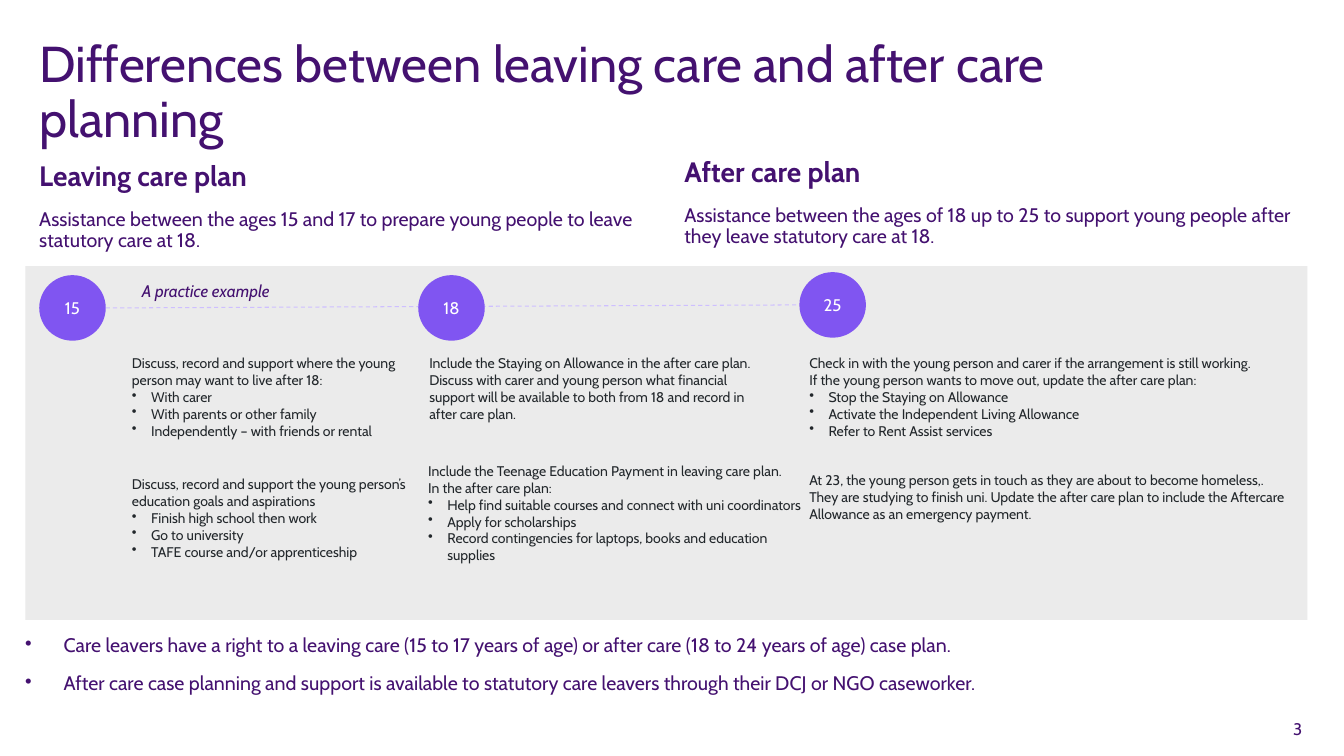
import dataclasses
import typing

import lxml.etree
import pptx
import pptx.dml.color
import pptx.enum.dml
import pptx.enum.shapes
import pptx.enum.text
import pptx.oxml.ns
import pptx.util

RGBColor = pptx.dml.color.RGBColor
PLUM = RGBColor(0x44, 0x11, 0x70)
VIOLET = RGBColor(0x80, 0x55, 0xF1)
LILAC = RGBColor(0xCE, 0xBF, 0xFF)
GREY = RGBColor(0xEB, 0xEB, 0xEB)
INK = RGBColor(0x22, 0x27, 0x2B)
WHITE = RGBColor(0xFF, 0xFF, 0xFF)

WIDE = pptx.util.Inches(13.33)
HIGH = pptx.util.Inches(7.5)
ALIGN = pptx.enum.text.PP_ALIGN
ANCHOR = pptx.enum.text.MSO_ANCHOR
SHAPE = pptx.enum.shapes.MSO_SHAPE

# Paragraph formats
LOOSE = {"line_spacing": 0.9, "space_after": pptx.util.Pt(12)}
TITLE = {"line_spacing": 0.9, "alignment": ALIGN.LEFT}
MIDDLE = {"alignment": ALIGN.CENTER}
RIGHT = {"alignment": ALIGN.RIGHT}
# Text frame formats
BARE = dict.fromkeys(("margin_left", "margin_top", "margin_right", "margin_bottom"), 0)


class Box(typing.NamedTuple):
    """Left, top, width and height as percentages of the slide."""
    left: float
    top: float
    width: float
    height: float


@dataclasses.dataclass
class Line:
    text: str
    size: int = 10
    color: RGBColor = INK
    look: dict = dataclasses.field(default_factory=dict)
    form: dict = dataclasses.field(default_factory=dict)
    indent: float = 0


@dataclasses.dataclass
class Block:
    box: Box
    lines: list[Line]
    frame: dict = dataclasses.field(default_factory=dict)


class Stop(typing.NamedTuple):
    age: str
    left: float
    top: float


def across(share: float) -> int:
    return round(WIDE * share / 100)


def down(share: float) -> int:
    return round(HIGH * share / 100)


def place(box: Box) -> tuple[int, int, int, int]:
    return across(box.left), down(box.top), across(box.width), down(box.height)


def apply(target: typing.Any, values: dict) -> None:
    for name, value in values.items():
        setattr(target, name, value)


def bullet(para: typing.Any, indent: float) -> None:
    """Give a paragraph a round bullet on a hanging indent in inches."""
    props = para._p.get_or_add_pPr()
    hang = pptx.util.Inches(indent)
    props.set("marL", str(hang))
    props.set("indent", str(-hang))
    mark = lxml.etree.SubElement(props, pptx.oxml.ns.qn("a:buChar"))
    mark.set("char", "•")


def write(shape: typing.Any, lines: list[Line], frame: dict) -> None:
    body = shape.text_frame
    apply(body, {"word_wrap": True, "vertical_anchor": ANCHOR.TOP,
                 "auto_size": pptx.enum.text.MSO_AUTO_SIZE.NONE} | frame)
    for index, line in enumerate(lines):
        para = body.add_paragraph() if index else body.paragraphs[0]
        if line.indent:
            bullet(para, line.indent)
        apply(para, line.form)
        run = para.add_run()
        run.text = line.text
        apply(run.font, {"name": "Cabin", "size": pptx.util.Pt(line.size)} | line.look)
        run.font.color.rgb = line.color


def fill(slide: typing.Any, kind: SHAPE, box: Box, color: RGBColor) -> typing.Any:
    shape = slide.shapes.add_shape(kind, *place(box))
    shape.shadow.inherit = False
    shape.fill.solid()
    shape.fill.fore_color.rgb = color
    shape.line.fill.background()
    return shape


def link(slide: typing.Any, start: Stop, end: Stop) -> None:
    """Draw the dashed line from the right of one stop to the left of another."""
    half = DOT_HIGH / 2
    line = slide.shapes.add_connector(
        pptx.enum.shapes.MSO_CONNECTOR.STRAIGHT,
        across(start.left + DOT_WIDE), down(start.top + half),
        across(end.left), down(end.top + half))
    line.line.color.rgb = LILAC
    line.line.width = pptx.util.Pt(0.75)
    line.line.dash_style = pptx.enum.dml.MSO_LINE.DASH
    lxml.etree.SubElement(line._element.spPr, pptx.oxml.ns.qn("a:effectLst"))


def plan(box: Box, head: str, text: str) -> Block:
    return Block(box, [Line(head, 20, PLUM, {"bold": True}, LOOSE),
                       Line(text, 14, PLUM, {}, LOOSE)], BARE)


def note(box: Box, intro: list[str], points: typing.Sequence[str] = ()) -> Block:
    return Block(box, [Line(text) for text in intro]
                 + [Line(text, indent=0.19) for text in points])


DOT_WIDE, DOT_HIGH = 4.95, 8.67
STOPS = [Stop("15", 2.92, 36.4), Stop("18", 31.12, 36.4), Stop("25", 59.48, 36)]
PANEL = Box(1.88, 35.2, 95.4, 46.8)
HEAD = Block(Box(2.92, 5.2, 83.85, 14.67), [
    Line("Differences between leaving care and after care planning", 36, PLUM, {}, TITLE)], BARE)
BLOCKS = [
    plan(Box(2.92, 21.47, 44.62, 13), "Leaving care plan",
         "Assistance between the ages 15 and 17 to prepare young people "
         "to leave statutory care at 18."),
    plan(Box(50.92, 20.93, 46.12, 13), "After care plan",
         "Assistance between the ages of 18 up to 25 to support young people "
         "after they leave statutory care at 18."),
    Block(Box(9.82, 36.53, 17.92, 4),
          [Line("A practice example", 12, PLUM, {"italic": True})]),
    note(Box(9.08, 46.27, 22.12, 12.53),
         ["Discuss, record and support where the young person may want to live after 18:"],
         ["With carer", "With parents or other family",
          "Independently – with friends or rental"]),
    note(Box(9.08, 62.27, 22.12, 12.53),
         ["Discuss, record and support the young person’s education goals and aspirations"],
         ["Finish high school then work", "Go to university",
          "TAFE course and/or apprenticeship"]),
    note(Box(31.2, 46.27, 26.92, 10.27),
         ["Include the Staying on Allowance in the after care plan. Discuss with carer and "
          "young person what financial support will be available to both from 18 and record "
          "in after care plan."]),
    note(Box(31.12, 60.53, 29.35, 19.33),
         ["Include the Teenage Education Payment in leaving care plan.",
          "In the after care plan:"],
         ["Help find suitable courses and connect with uni coordinators",
          "Apply for scholarships",
          "Record contingencies for laptops, books and education supplies"]),
    note(Box(59.48, 46.27, 38.77, 12.53),
         ["Check in with the young person and carer if the arrangement is still working.",
          "If the young person wants to move out, update the after care plan:"],
         ["Stop the Staying on Allowance", "Activate the Independent Living Allowance",
          "Refer to Rent Assist services"]),
    note(Box(59.48, 61.73, 37.35, 8.13),
         ["At 23, the young person gets in touch as they are about to become homeless,. They "
          "are studying to finish uni. Update the after care plan to include the Aftercare "
          "Allowance as an emergency payment."]),
    Block(Box(1.88, 84.13, 94.28, 10), [Line(text, 14, PLUM, {}, LOOSE, 0.38) for text in (
        "Care leavers have a right to a leaving care (15 to 17 years of age) or after care "
        "(18 to 24 years of age) case plan.",
        "After care case planning and support is available to statutory care leavers through "
        "their DCJ or NGO caseworker.")], BARE),
    Block(Box(92.85, 95.07, 4.05, 2.67), [Line("3", 12, PLUM, {}, RIGHT)], BARE),
]


def main() -> None:
    deck = pptx.Presentation()
    apply(deck, {"slide_width": WIDE, "slide_height": HIGH})
    slide = deck.slides.add_slide(deck.slide_layouts.get_by_name("Title Only"))
    title = slide.shapes.title
    apply(title, dict(zip(("left", "top", "width", "height"), place(HEAD.box))))
    write(title, HEAD.lines, HEAD.frame)
    fill(slide, SHAPE.RECTANGLE, PANEL, GREY)
    link(slide, STOPS[0], STOPS[-1])
    for stop in STOPS:
        dot = fill(slide, SHAPE.OVAL, Box(stop.left, stop.top, DOT_WIDE, DOT_HIGH), VIOLET)
        write(dot, [Line(stop.age, 12, WHITE, {}, MIDDLE)], {"vertical_anchor": ANCHOR.MIDDLE})
    for block in BLOCKS:
        write(slide.shapes.add_textbox(*place(block.box)), block.lines, block.frame)
    deck.save("out.pptx")


if __name__ == "__main__":
    main()
